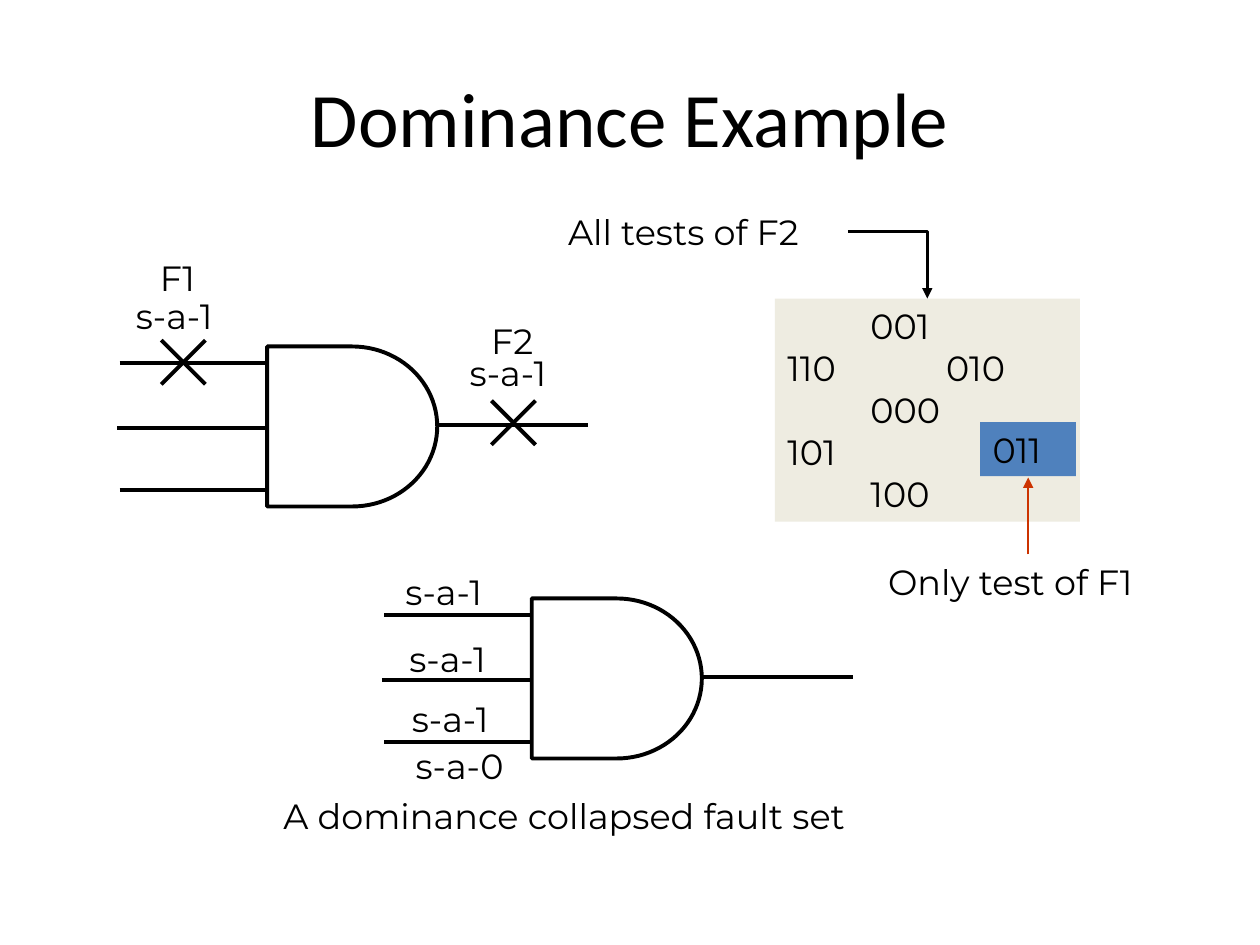
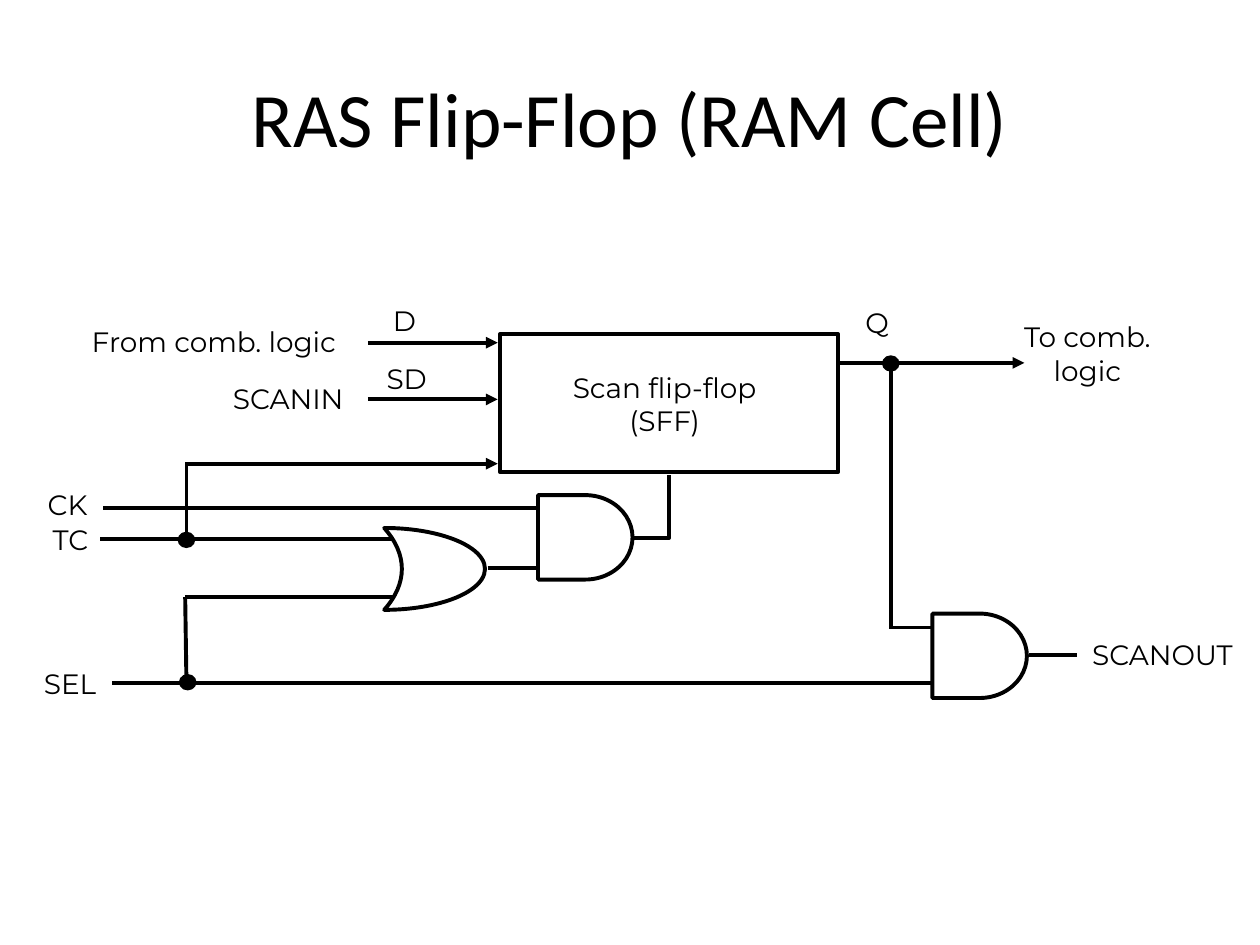
"""Build two logic-circuit slides: fault dominance and a random-access scan cell."""
from dataclasses import dataclass
from typing import NamedTuple

from lxml import etree
from pptx import Presentation
from pptx import slide as sl
from pptx import util as u
from pptx.dml import color as dml
from pptx.enum import shapes, text
from pptx.oxml import ns

WIDTH, HEIGHT = u.Inches(10), u.Inches(7.5)
COL, ROW = WIDTH / 100, HEIGHT / 75
BLACK = dml.RGBColor(0x00, 0x00, 0x00)
CREAM = dml.RGBColor(0xEE, 0xEC, 0xE1)
BLUE = dml.RGBColor(0x4F, 0x81, 0xBD)
RED = dml.RGBColor(0xCC, 0x33, 0x00)
TITLE_FONT, LABEL_FONT = "Calibri", "Montserrat"
BOLD_LINE, THIN_LINE = 2.25, 1.5
SHAPE = shapes.MSO_SHAPE
LINE_ROWS = {20: 3.3, 16: 2.7}


class Point(NamedTuple):
    """A place on the grid, in columns and rows."""

    x: float
    y: float


class Box(NamedTuple):
    """A frame on the grid, in columns and rows."""

    left: float
    top: float
    width: float
    height: float


@dataclass(frozen=True)
class Label:
    """One or more unwrapped lines of text."""

    left: float
    top: float
    width: float
    lines: tuple[str, ...]
    centred: bool = False


@dataclass(frozen=True)
class Wire:
    """A straight or one-bend line, with an optional arrowhead at its end."""

    start: Point
    end: Point
    arrow: bool = False
    bent: bool = False
    weight: float = BOLD_LINE
    color: dml.RGBColor = BLACK


def wire(x1: float, y1: float, x2: float, y2: float, **style) -> Wire:
    """Return a wire between two grid places."""
    return Wire(Point(x1, y1), Point(x2, y2), **style)


def frame(box: Box) -> tuple[u.Emu, ...]:
    """Convert a grid frame to slide lengths."""
    return tuple(u.Emu(round(n * unit)) for n, unit in zip(box, (COL, ROW, COL, ROW)))


def write(paragraph, words: str, font: str, size: float) -> None:
    """Add one black run to a paragraph."""
    run = paragraph.add_run()
    run.text = words
    run.font.name, run.font.size = font, u.Pt(size)
    run.font.color.rgb = BLACK


def add_titled_slide(deck, title: str) -> sl.Slide:
    """Add a title-only slide with the shared title style."""
    page = deck.slides.add_slide(deck.slide_layouts[5])
    heading = page.shapes.title
    heading.left, heading.top, heading.width, heading.height = frame(Box(5, 3, 90, 12.5))
    heading.text_frame.vertical_anchor = text.MSO_ANCHOR.MIDDLE
    paragraph = heading.text_frame.paragraphs[0]
    paragraph.alignment = text.PP_ALIGN.CENTER
    write(paragraph, title, TITLE_FONT, 44)
    return page


def draw_label(page: sl.Slide, label: Label, size: int) -> None:
    """Draw a label in a box that fits its text."""
    height = 1 + LINE_ROWS[size] * len(label.lines)
    words = page.shapes.add_textbox(*frame(Box(label.left, label.top, label.width, height))).text_frame
    words.word_wrap = False
    words.auto_size = text.MSO_AUTO_SIZE.SHAPE_TO_FIT_TEXT
    for index, line in enumerate(label.lines):
        paragraph = words.add_paragraph() if index else words.paragraphs[0]
        paragraph.alignment = text.PP_ALIGN.CENTER if label.centred else text.PP_ALIGN.LEFT
        write(paragraph, line, LABEL_FONT, size)


def draw_wire(page: sl.Slide, path: Wire) -> None:
    """Draw a wire as a connector without shadow."""
    kind = shapes.MSO_CONNECTOR.ELBOW if path.bent else shapes.MSO_CONNECTOR.STRAIGHT
    ends = frame(Box(*path.start, *path.end))
    connector = page.shapes.add_connector(kind, *ends)
    connector.line.color.rgb = path.color
    connector.line.width = u.Pt(path.weight)
    properties = connector._element.spPr
    if path.bent:
        properties.find(ns.qn("a:prstGeom")).set("prst", "bentConnector2")
    if path.arrow:
        etree.SubElement(properties.find(ns.qn("a:ln")), ns.qn("a:tailEnd"), type="triangle")
    etree.SubElement(properties, ns.qn("a:effectLst"))


def draw_shape(page: sl.Slide, kind: SHAPE, box: Box, fill: dml.RGBColor | None = None):
    """Draw a filled shape without outline, or an outlined shape without fill."""
    shape = page.shapes.add_shape(kind, *frame(box))
    shape.shadow.inherit = False
    if fill is None:
        shape.fill.background()
        shape.line.color.rgb = BLACK
        shape.line.width = u.Pt(BOLD_LINE)
    else:
        shape.fill.solid()
        shape.fill.fore_color.rgb = fill
        shape.line.fill.background()
    return shape


def draw_three_input_gate(page: sl.Slide, left: float, top: float) -> None:
    """Draw an AND gate with three inputs and one output."""
    draw_shape(page, SHAPE.FLOWCHART_DELAY, Box(left, top, 13.5, 12.7))
    for x1, x2, y in ((-11.7, 0.1, 1.3), (-11.9, 0, 6.5), (-11.7, 0.1, 11.4), (13.6, 25.5, 6.2)):
        draw_wire(page, wire(left + x1, top + y, left + x2, top + y))


def draw_fault_cross(page: sl.Slide, centre: Point) -> None:
    """Mark a stuck-at fault with a cross."""
    arm = 1.75
    for slope in (arm, -arm):
        draw_wire(page, wire(centre.x - arm, centre.y - slope, centre.x + arm, centre.y + slope))


def draw_tests(page: sl.Slide, box: Box, fill: dml.RGBColor, rows: list[tuple[float, str]]) -> None:
    """Draw a filled set of test vectors, each row with its own indent in columns."""
    words = draw_shape(page, SHAPE.RECTANGLE, box, fill).text_frame
    words.vertical_anchor = text.MSO_ANCHOR.TOP
    for index, (indent, vectors) in enumerate(rows):
        paragraph = words.add_paragraph() if index else words.paragraphs[0]
        paragraph.alignment = text.PP_ALIGN.LEFT
        properties = paragraph._p.get_or_add_pPr()
        properties.set("marL", str(round(indent * COL)))
        if "\t" in vectors:
            stops = etree.SubElement(properties, ns.qn("a:tabLst"))
            etree.SubElement(stops, ns.qn("a:tab"), pos=str(round(12.6 * COL)), algn="l")
        write(paragraph, vectors, LABEL_FONT, 20)


def build_dominance(deck) -> None:
    """Build the fault dominance slide."""
    page = add_titled_slide(deck, "Dominance Example")
    for left, top in ((21.2, 27.5), (42.2, 47.5)):
        draw_three_input_gate(page, left, top)
    for fault in (Point(14.55, 28.75), Point(40.75, 33.55)):
        draw_fault_cross(page, fault)
    f2_tests = [(6.6, "001"), (0, "110\t010"), (6.6, "000"), (0, "101"), (6.6, "100")]
    draw_tests(page, Box(61.5, 23.7, 24.2, 17.7), CREAM, f2_tests)
    draw_tests(page, Box(77.8, 33.5, 7.6, 4.3), BLUE, [(0, "011")])
    draw_wire(page, wire(67.3, 18.4, 73.6, 23.7, arrow=True, bent=True, weight=THIN_LINE))
    draw_wire(page, wire(81.6, 44, 81.6, 37.9, arrow=True, weight=THIN_LINE, color=RED))
    stuck_at_one = ((9.8, 22.9), (36.3, 27.4), (31.2, 44.8), (31.5, 50.1), (31.7, 54.9))
    labels = [Label(left, top, 9.3, ("s-a-1",)) for left, top in stuck_at_one] + [
        Label(11.7, 19.9, 5.7, ("F1",)),
        Label(38, 24.9, 5.7, ("F2",)),
        Label(44.1, 16.2, 23.1, ("All tests of F2",)),
        Label(69.5, 44, 24.2, ("Only test of F1",)),
        Label(32, 58.6, 9.3, ("s-a-0",)),
        Label(21.5, 62.6, 51, ("A dominance collapsed fault set",)),
    ]
    for label in labels:
        draw_label(page, label, 20)


def build_scan_cell(deck) -> None:
    """Build the random-access scan flip-flop slide."""
    page = add_titled_slide(deck, "RAS Flip-Flop (RAM Cell)")
    draw_shape(page, SHAPE.RECTANGLE, Box(39.7, 26.5, 26.8, 11))
    or_gate = draw_shape(page, SHAPE.MOON, Box(30.5, 41.9, 8, 6.5))
    or_gate.adjustments[0] = 0.825
    or_gate._element.spPr.find(ns.qn("a:xfrm")).set("flipH", "1")
    for left, top in ((42.7, 39.3), (74, 48.7)):
        draw_shape(page, SHAPE.FLOWCHART_DELAY, Box(left, top, 7.5, 6.7))
    clock_and_scan_wires = [
        wire(50.3, 42.7, 53.1, 37.7, bent=True),
        wire(42.5, 40.3, 8.2, 40.3),
        wire(38.7, 45.1, 42.7, 45.1),
        wire(31.2, 42.8, 7.9, 42.8),
        wire(14.8, 36.7, 14.8, 43),
        wire(14.7, 47.4, 31.3, 47.4),
        wire(14.7, 47.4, 14.8, 54.3),
        wire(74, 54.2, 8.9, 54.2),
        wire(70.7, 28.8, 70.7, 49.9),
        wire(74, 49.8, 70.6, 49.8),
        wire(81.7, 52, 85.5, 52),
    ]
    signals = [(29.2, 27.2, 39.5), (29.2, 31.7, 39.5), (14.7, 36.8, 39.5), (66.5, 28.8, 81.3)]
    for path in clock_and_scan_wires + [wire(x1, y, x2, y, arrow=True) for x1, y, x2 in signals]:
        draw_wire(page, path)
    for junction in (Point(14.9, 54.15), Point(14.8, 42.85), Point(70.7, 28.85)):
        draw_shape(page, SHAPE.OVAL, Box(junction.x - 0.7, junction.y - 0.65, 1.4, 1.3), BLACK)
    labels = [
        Label(43.8, 28.9, 17.9, ("Scan flip-flop", "(SFF)"), centred=True),
        Label(79.7, 24.9, 13.2, ("To comb.", "logic"), centred=True),
        Label(67.7, 23.8, 3.9, ("Q",)),
        Label(30.2, 23.6, 3.8, ("D",)),
        Label(29.7, 28.2, 5.3, ("SD",)),
        Label(6.3, 25.3, 23, ("From comb. logic",)),
        Label(17.5, 29.8, 11.7, ("SCANIN",)),
        Label(3.2, 41, 5.3, ("TC",)),
        Label(2.8, 38.2, 5.6, ("CK",)),
        Label(2.5, 52.4, 6.7, ("SEL",)),
        Label(85.7, 50.1, 14.3, ("SCANOUT",)),
    ]
    for label in labels:
        draw_label(page, label, 16)


def main() -> None:
    """Build and save the deck."""
    deck = Presentation()
    deck.slide_width, deck.slide_height = WIDTH, HEIGHT
    build_dominance(deck)
    build_scan_cell(deck)
    deck.save("out.pptx")


if __name__ == "__main__":
    main()
